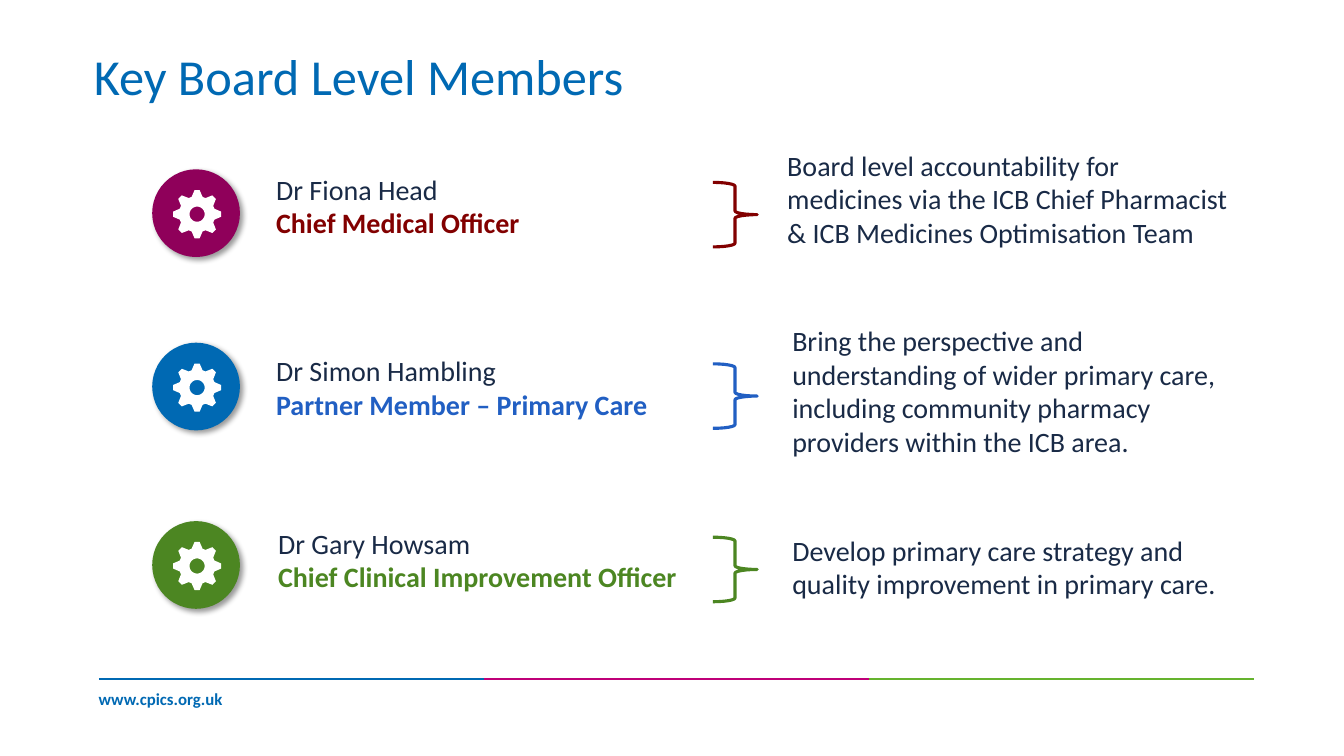
from dataclasses import dataclass
from math import cos, radians, sin

from lxml import etree
from pptx import Presentation
from pptx.dml.color import RGBColor as Rgb
from pptx.enum.shapes import MSO_CONNECTOR as Connector, MSO_SHAPE as Shape
from pptx.enum.text import MSO_ANCHOR as Anchor, MSO_AUTO_SIZE as AutoSize, PP_ALIGN as Align
from pptx.oxml import parse_xml
from pptx.oxml.ns import nsdecls, qn
from pptx.util import Inches, Pt


@dataclass(frozen=True)
class Theme:
    """Colours, font and type sizes of the slide."""
    font: str = "Calibri"
    title_size: int = 36
    body_size: int = 20
    footer_size: int = 12
    text: str = "192A46"
    brand: str = "0069B3"
    white: str = "FFFFFF"
    rules: tuple = ("0069B3", "BF0078", "65B32E")


@dataclass(frozen=True)
class Member:
    """A board member with the places of the parts of the row."""
    name: str
    role: str
    duty: str
    badge_colour: str
    role_colour: str
    badge_top: float
    brace_top: float
    name_box: tuple
    duty_box: tuple


THEME = Theme()
BADGE_LEFT, BADGE_SIZE = 1.51, 0.87
RULE_LEFT, RULE_TOP, RULE_LENGTH = 0.98, 6.74, 3.82

MEMBERS = (
    Member("Dr Fiona Head", "Chief Medical Officer",
           "Board level accountability for medicines via the ICB Chief Pharmacist "
           "& ICB Medicines Optimisation Team",
           "8F005A", "820000", 1.68, 1.81, (2.64, 1.66, 2.91, 0.77), (7.71, 1.42, 4.67, 1.11)),
    Member("Dr Simon Hambling", "Partner Member – Primary Care",
           "Bring the perspective and understanding of wider primary care, "
           "including community pharmacy providers within the ICB area.",
           "0069B3", "215FC3", 3.4, 3.61, (2.64, 3.46, 4.28, 0.77), (7.76, 3.16, 4.67, 1.45)),
    Member("Dr Gary Howsam", "Chief Clinical Improvement Officer",
           "Develop primary care strategy and quality improvement in primary care.",
           "4C8622", "4C8622", 5.17, 5.33, (2.66, 5.17, 4.62, 0.77), (7.76, 5.24, 4.9, 0.77)),
)


def style(paragraph, size, colour, bold=False):
    """Format every run of a paragraph."""
    paragraph.alignment = Align.LEFT
    for run in paragraph.runs:
        run.font.name = THEME.font
        run.font.size = Pt(size)
        run.font.bold = bold
        run.font.color.rgb = Rgb.from_string(colour)


def add_text(slide, box, lines):
    """Add a wrapping text box from (text, size, colour, bold) lines."""
    frame = slide.shapes.add_textbox(*map(Inches, box)).text_frame
    frame.word_wrap = True
    frame.auto_size = AutoSize.SHAPE_TO_FIT_TEXT
    frame.text = "\n".join(line[0] for line in lines)
    for paragraph, (_, size, colour, bold) in zip(frame.paragraphs, lines):
        style(paragraph, size, colour, bold)


def set_title(slide, text):
    """Place and format the title placeholder."""
    title = slide.shapes.title
    title.left, title.top, title.width, title.height = map(Inches, (0.83, 0.4, 7.18, 0.71))
    title.text_frame.text = text
    title.text_frame.vertical_anchor = Anchor.TOP
    title.text_frame.auto_size = AutoSize.NONE
    style(title.text_frame.paragraphs[0], THEME.title_size, THEME.brand)


def fill_plain(shape, colour):
    """Give a shape a solid fill without line or shadow."""
    shape.shadow.inherit = False
    shape.fill.solid()
    shape.fill.fore_color.rgb = Rgb.from_string(colour)
    shape.line.fill.background()


def cast_shadow(shape):
    """Give a shape a soft shadow to the lower right."""
    effects = shape.element.spPr.find(qn("a:effectLst"))
    effects.append(parse_xml(
        f'<a:outerShdw {nsdecls("a")} blurRad="{Pt(4)}" dist="{Pt(3)}" dir="2700000" '
        'algn="tl" rotWithShape="0"><a:srgbClr val="000000"><a:alpha val="40000"/>'
        '</a:srgbClr></a:outerShdw>'))


def add_gear(slide, centre_x, centre_y):
    """Draw a white gear with eight teeth and a round hole."""
    def point(radius, angle):
        turn = radians(angle)
        return Inches(centre_x + radius * cos(turn)), Inches(centre_y + radius * sin(turn))

    tooth = ((0.18, -17.5), (0.24, -6), (0.24, 6), (0.18, 17.5))
    rim = [point(radius, 45 * step + angle) for step in range(8) for radius, angle in tooth]
    hole = [point(0.075, -angle) for angle in range(0, 360, 10)]
    outline = slide.shapes.build_freeform(*rim[0])
    outline.add_line_segments(rim[1:], close=True)
    outline.move_to(*hole[0])
    outline.add_line_segments(hole[1:], close=True)
    fill_plain(outline.convert_to_shape(), THEME.white)


def add_badge(slide, top, colour):
    """Add a coloured disc with a gear in its middle."""
    disc = slide.shapes.add_shape(Shape.OVAL, *map(Inches, (BADGE_LEFT, top, BADGE_SIZE, BADGE_SIZE)))
    fill_plain(disc, colour)
    cast_shadow(disc)
    add_gear(slide, BADGE_LEFT + BADGE_SIZE / 2 + 0.01, top + BADGE_SIZE / 2 + 0.01)


def add_brace(slide, top, colour):
    """Add the brace that links a member to the duty."""
    brace = slide.shapes.add_shape(Shape.RIGHT_BRACE, *map(Inches, (7.07, top, 0.44, 0.64)))
    brace.shadow.inherit = False
    brace.fill.background()
    brace.line.color.rgb = Rgb.from_string(colour)
    brace.line.width = Pt(2.25)


def add_member(slide, member):
    """Add one row: badge, name and role, brace, duty."""
    add_badge(slide, member.badge_top, member.badge_colour)
    add_text(slide, member.name_box, [
        (member.name, THEME.body_size, THEME.text, False),
        (member.role, THEME.body_size, member.role_colour, True)])
    add_brace(slide, member.brace_top, member.role_colour)
    add_text(slide, member.duty_box, [(member.duty, THEME.body_size, THEME.text, False)])


def add_footer(slide):
    """Add the three-part rule and the web address."""
    for index, colour in enumerate(THEME.rules):
        start = RULE_LEFT + index * RULE_LENGTH
        rule = slide.shapes.add_connector(
            Connector.STRAIGHT, *map(Inches, (start, RULE_TOP, start + RULE_LENGTH, RULE_TOP)))
        rule.line.color.rgb = Rgb.from_string(colour)
        rule.line.width = Pt(1.25)
        etree.SubElement(rule.element.spPr, qn("a:effectLst"))
    add_text(slide, (0.88, 6.78, 3.2, 0.3),
             [("www.cpics.org.uk", THEME.footer_size, THEME.brand, True)])


def main():
    """Build the slide and save it."""
    deck = Presentation()
    deck.slide_width, deck.slide_height = Inches(13.33), Inches(7.5)
    slide = deck.slides.add_slide(deck.slide_layouts[5])
    set_title(slide, "Key Board Level Members")
    for member in MEMBERS:
        add_member(slide, member)
    add_footer(slide)
    deck.save("out.pptx")


if __name__ == "__main__":
    main()
